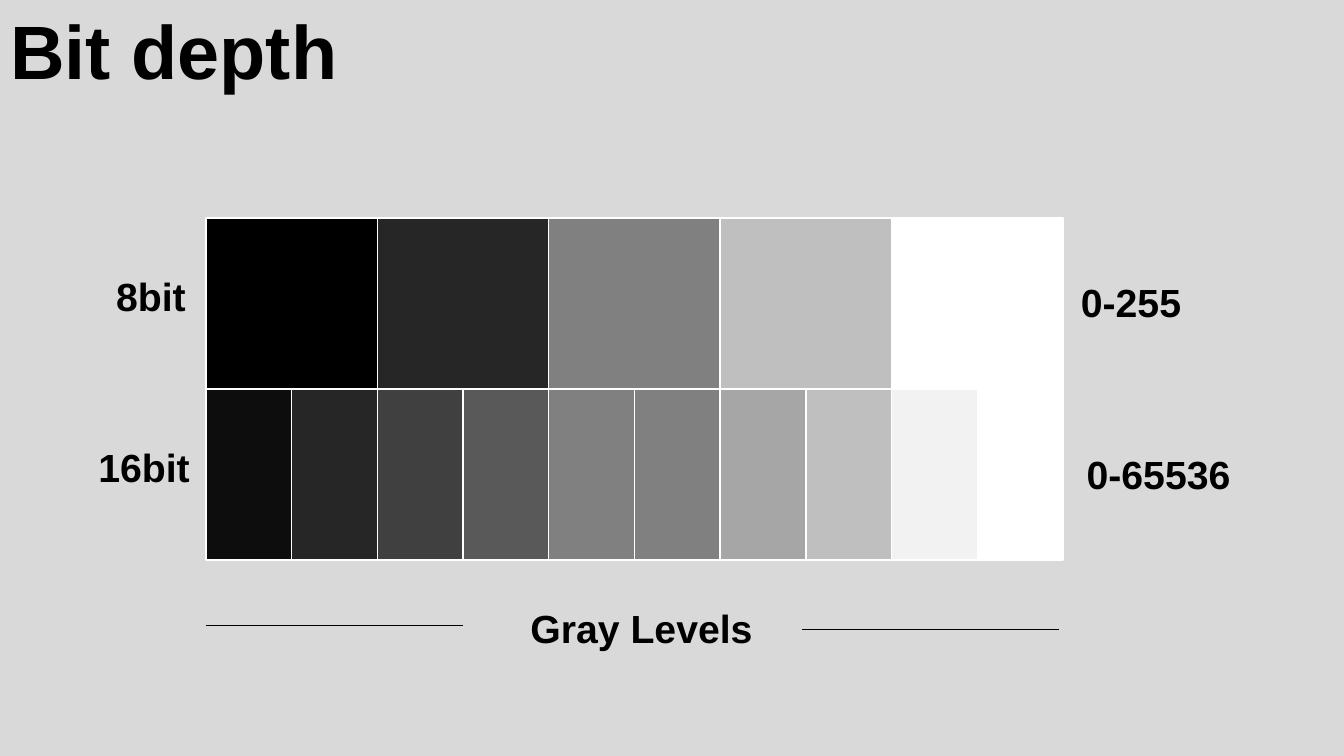
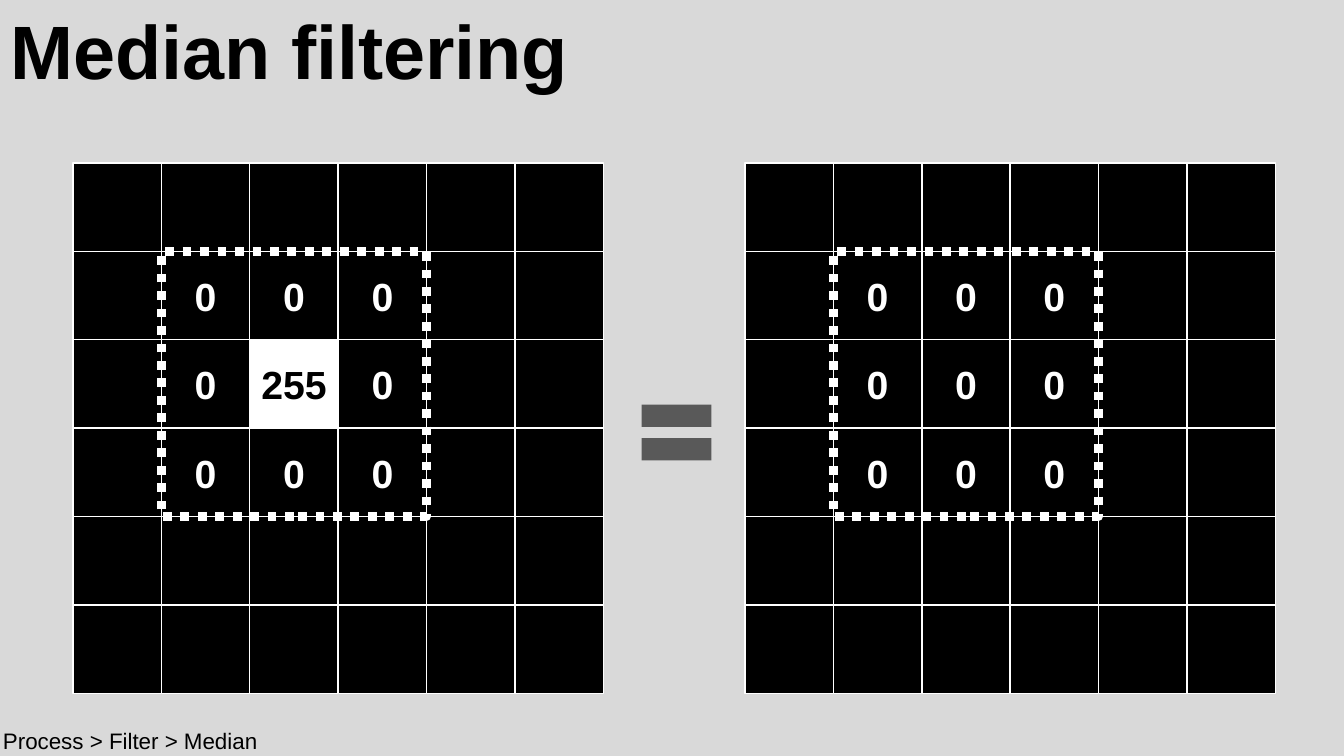
from lxml import etree
from pptx import Presentation
from pptx import util as u
from pptx.dml.color import RGBColor
from pptx.enum import dml, shapes, text
from pptx.oxml.ns import qn

# Shared scale, colours and text formats
PX = 9071  # EMU per px
rgb = RGBColor.from_string
BACKGROUND, BLACK, WHITE, DARK_GRAY = "D9D9D9", "000000", "FFFFFF", "595959"
RECTANGLE = shapes.MSO_SHAPE.RECTANGLE
TITLE = {"name": "Arial", "size": u.Pt(54), "bold": True}
LABEL = {"name": "Arial", "size": u.Pt(28), "bold": True}
NOTE = {"name": "Arial", "size": u.Pt(16), "bold": False}
TITLE_BOX = {"left": 0, "top": -1, "width": 1000, "height": 102}


def add_box(slide, box, preset=None, fill=None, line=None, weight=1):
    """Add a shape, or a text box when no preset is given; box is in px."""
    left, top, width, height = [int(length * PX) for length in box]
    if preset is None:
        return slide.shapes.add_textbox(left, top, width, height)
    shape = slide.shapes.add_shape(preset, left, top, width, height)
    shape.shadow.inherit = False
    if fill:
        shape.fill.solid()
        shape.fill.fore_color.rgb = rgb(fill)
    else:
        shape.fill.background()
    if line:
        shape.line.color.rgb = rgb(line)
        shape.line.width = u.Pt(weight)
    else:
        shape.line.fill.background()
    return shape


def write(shape, wording, font_format, color=BLACK,
          align=text.PP_ALIGN.CENTER, anchor=text.MSO_ANCHOR.TOP, **frame_format):
    frame = shape.text_frame
    frame_format = {"word_wrap": True, "vertical_anchor": anchor,
                    "auto_size": text.MSO_AUTO_SIZE.NONE, **frame_format}
    for name, value in frame_format.items():
        setattr(frame, name, value)
    paragraph = frame.paragraphs[0]
    paragraph.alignment = align
    run = paragraph.add_run()
    run.text = wording
    for name, value in font_format.items():
        setattr(run.font, name, value)
    run.font.color.rgb = rgb(color)


presentation = Presentation()
presentation.slide_width, presentation.slide_height = 1344 * PX, 756 * PX
background = presentation.slide_master.background.fill
background.solid()
background.fore_color.rgb = rgb(BACKGROUND)

# Slides with their titles
slides = []
for heading in ("Bit depth", "Median filtering"):
    slide = presentation.slides.add_slide(presentation.slide_layouts[5])
    title = slide.shapes.title
    for name, length in TITLE_BOX.items():
        setattr(title, name, length * PX)
    write(title, heading, TITLE, align=text.PP_ALIGN.LEFT)
    slides.append(slide)
depth_slide, median_slide = slides

# Bit depth: two rows of gray levels across the same width
SCALE_LEFT, SCALE_TOP, SCALE_WIDTH, ROW_HEIGHT = 206, 218, 857, 171
gray_rows = [
    ["000000", "262626", "808080", "BFBFBF", "FFFFFF"],
    ["0D0D0D", "262626", "404040", "595959", "808080",
     "808080", "A6A6A6", "BFBFBF", "F2F2F2", "FFFFFF"],
]
for row, grays in enumerate(gray_rows):
    width = SCALE_WIDTH / len(grays)
    for column, gray in enumerate(grays):
        box = (SCALE_LEFT + column * width, SCALE_TOP + row * ROW_HEIGHT, width, ROW_HEIGHT)
        add_box(depth_slide, box, RECTANGLE, gray, WHITE)

# Bit depth: labels and axis lines
for wording, left, top, width in [
    ("8bit", 46, 267, 210), ("16bit", 39, 438, 210),
    ("0-255", 1026, 273, 210), ("0-65536", 1003, 445, 311),
    ("Gray Levels", 479, 599, 325),
]:
    write(add_box(depth_slide, (left, top, width, 57)), wording, LABEL)

for left, top in [(206, 625), (802, 629)]:
    axis = depth_slide.shapes.add_connector(
        shapes.MSO_CONNECTOR.STRAIGHT, left * PX, top * PX, (left + 257) * PX, top * PX)
    axis.line.color.rgb = rgb(BLACK)
    axis.line.width = u.Pt(0.5)
    etree.SubElement(axis._element.spPr, qn("a:effectLst"))

# Median filtering: pixel grids before and after, with the 3 by 3 window
GRID_TOP, GRID_COUNT, CELL = 163, 6, 88.4
WINDOW = range(1, 4)
for grid_left, center_value in [(73, "255"), (745, "0")]:
    for row in range(GRID_COUNT):
        for column in range(GRID_COUNT):
            is_center = row == column == 2
            value = center_value if is_center else "0"
            fill, ink = (WHITE, BLACK) if value == "255" else (BLACK, WHITE)
            box = (grid_left + column * CELL, GRID_TOP + row * CELL, CELL, CELL)
            cell = add_box(median_slide, box, RECTANGLE, fill, WHITE)
            if row in WINDOW and column in WINDOW:
                write(cell, value, LABEL, ink, anchor=text.MSO_ANCHOR.MIDDLE,
                      margin_left=0, margin_right=0)
    window_box = (grid_left + CELL, GRID_TOP + CELL, 3 * CELL, 3 * CELL)
    window = add_box(median_slide, window_box, RECTANGLE, line=WHITE, weight=6.25)
    window.line.dash_style = dml.MSO_LINE.ROUND_DOT

# Median filtering: equals sign and menu path
add_box(median_slide, (629, 385, 95, 95), shapes.MSO_SHAPE.MATH_EQUAL, DARK_GRAY)
write(add_box(median_slide, (-7, 722, 470, 37)), "Process > Filter > Median", NOTE,
      align=text.PP_ALIGN.LEFT)

presentation.save("out.pptx")
